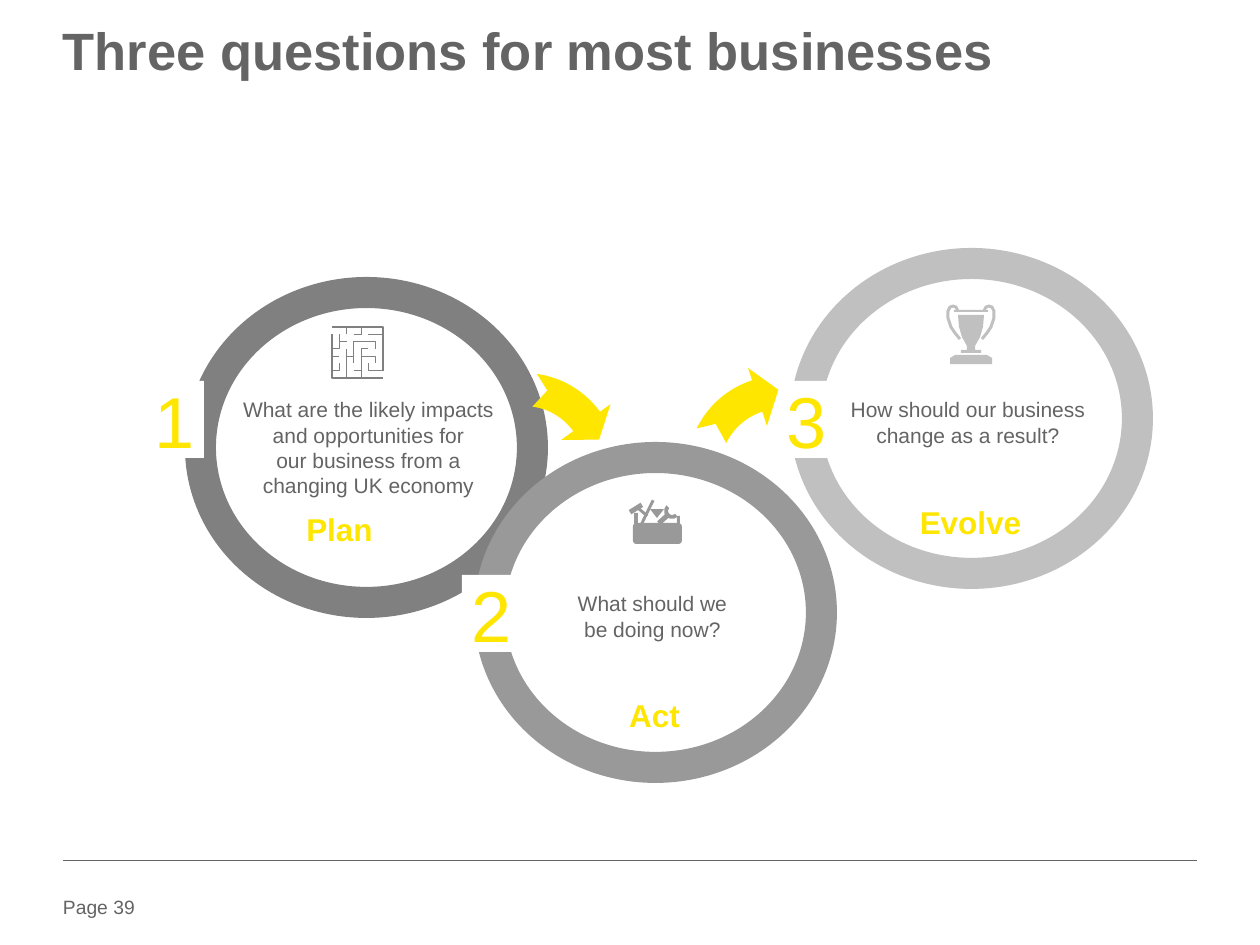
from copy import deepcopy
from dataclasses import dataclass
from math import cos, radians, sin

from lxml import etree
from pptx import Presentation
from pptx.dml.color import RGBColor
from pptx.enum.shapes import MSO_CONNECTOR, MSO_SHAPE
from pptx.enum.text import MSO_ANCHOR, PP_ALIGN
from pptx.oxml.ns import qn
from pptx.util import Pt

PX = 914400 / 126
FINE = 100
DONUT, RECT, ROUNDED = MSO_SHAPE.DONUT, MSO_SHAPE.RECTANGLE, MSO_SHAPE.ROUNDED_RECTANGLE
TRIANGLE, HALF_RING = MSO_SHAPE.ISOSCELES_TRIANGLE, MSO_SHAPE.BLOCK_ARC
STRAIGHT = MSO_CONNECTOR.STRAIGHT
LEFT, CENTER = PP_ALIGN.LEFT, PP_ALIGN.CENTER
TOP, MIDDLE = MSO_ANCHOR.TOP, MSO_ANCHOR.MIDDLE


@dataclass(frozen=True)
class Theme:
    font: str = "Arial"
    ink: str = "646464"
    accent: str = "FFE600"
    paper: str = "FFFFFF"
    title: float = 30
    number: float = 41.2
    label: float = 18
    body: float = 12
    footer: float = 11


THEME = Theme()
SLIDE_SIZE = (1260, 945)
RING_SIZE, RING_WIDTH = (363, 341), 0.091
NUMBER_SIZE = (59, 77)
LABEL_SIZE = (193, 38)
TITLE = ("Three questions for most businesses", (63, 28, 1134, 118))
FOOTER = ("Page 39", (63, 895, 100, 28))
RULE = (63, 860, 1197, 860)

STAGES = [
    dict(number="1", label="Plan", color="808080", ring=(185, 277), number_at=(145, 381),
         question="What are the likely impacts and opportunities for\nour business from a\nchanging UK economy",
         question_box=(224, 397, 289, 102), label_at=(243, 510)),
    dict(number="3", label="Evolve", color="C0C0C0", ring=(790, 248), number_at=(777, 381),
         question="How should our business\nchange as a result?",
         question_box=(812, 397, 312, 50), label_at=(874, 503)),
    dict(number="2", label="Act", color="999999", ring=(474, 442), number_at=(462, 575),
         question="What should we\nbe doing now?",
         question_box=(526, 591, 253, 50), label_at=(558, 696)),
]

ARROW_PIVOT = (-48, 62)
ARROW_RADII = dict(barb_in=46, inner=61, middle=80, outer=94, barb_out=107)
ARROW_ANGLES = dict(tail=8, notch=17, neck=54, tip=70)
ARROWS = [dict(center=(572, 405), turn=0), dict(center=(737, 405), turn=-72)]

MAZE_AT, MAZE_SIZE, MAZE_CELLS = (332, 327), 51, 7
MAZE_BORDER = [
    [(0, 0), (7, 0), (7, 6)],
    [(0, 1), (0, 7), (7, 7)],
]
MAZE_WALLS = [
    [(2, 0), (2, 1)], [(4, 0), (4, 1), (3, 1)], [(5, 1), (7, 1)],
    [(7, 6), (5, 6), (5, 5)], [(1, 1), (1, 3), (0, 3)], [(1, 2), (2, 2)],
    [(0, 4), (1, 4)], [(0, 6), (1, 6), (1, 5)], [(2, 7), (2, 3)],
    [(2, 4), (3, 4)], [(3, 5), (3, 2), (6, 2), (6, 3)], [(3, 6), (4, 6)],
    [(4, 7), (4, 3), (5, 3)], [(4, 4), (6, 4), (6, 5)],
]

TROPHY_AXIS = 971
TROPHY_PROFILES = dict(
    rim=[(17, 310), (17, 312)],
    cup=[(13, 315), (12, 327), (9, 337), (4, 346), (4, 350), (10, 350), (10, 353)],
    base=[(16, 355), (21, 358), (21, 364)],
)
TROPHY_HANDLE = [(13, 311), (15, 307), (18, 306), (21, 307), (23, 311),
                 (23, 318), (20, 327), (16, 333), (11, 339)]

TOOLBOX = dict(
    case=(ROUNDED, (633, 523, 49, 21), 0),
    left_side=(RECT, (634, 513, 4, 14), 0),
    right_side=(RECT, (677, 516, 3, 10), 0),
    hammer_head=(RECT, (629, 506, 14, 5), -32),
    hammer_handle=(RECT, (635, 510, 14, 3), 40),
    screwdriver=(RECT, (646, 499, 3, 26), 26),
    chisel=(TRIANGLE, (650, 509, 14, 9), 180),
    wrench_jaw=(HALF_RING, (664, 503, 16, 16), 225),
    wrench_handle=(RECT, (657, 516, 14, 5), -42),
)


def emu(*lengths):
    return [round(length * PX) for length in lengths]


def paint(shape, color):
    shape.shadow.inherit = False
    shape.fill.solid()
    shape.fill.fore_color.rgb = RGBColor.from_string(color)
    shape.line.fill.background()
    return shape


def add_filled(page, kind, box, color):
    return paint(page.shapes.add_shape(kind, *emu(*box)), color)


def write(shape, text, *, size, color=THEME.ink, bold=False, align=CENTER,
          anchor=TOP, spacing=None, after=0):
    frame = shape.text_frame
    frame.word_wrap = True
    frame.margin_left = frame.margin_top = frame.margin_right = frame.margin_bottom = 0
    frame.vertical_anchor = anchor
    para = frame.paragraphs[0]
    para.text = text
    para.alignment = align
    para.line_spacing = spacing
    para.space_after = Pt(after)
    for span in para.runs:
        span.font.name = THEME.font
        span.font.size = Pt(size)
        span.font.bold = bold
        span.font.color.rgb = RGBColor.from_string(color)
    for line_break in para._p.findall(qn("a:br")):
        line_break.insert(0, deepcopy(para.runs[0].font._element))


def add_text(page, text, box, **style):
    write(page.shapes.add_textbox(*emu(*box)), text, **style)


def add_freeform(page, paths, closed):
    first, *others = [[(x * FINE, y * FINE) for x, y in points] for points in paths]
    builder = page.shapes.build_freeform(*first[0], scale=PX / FINE)
    builder.add_line_segments(first[1:], close=closed)
    for points in others:
        builder.move_to(*points[0])
        builder.add_line_segments(points[1:], close=closed)
    return builder.convert_to_shape()


def add_strokes(page, paths, color, width):
    shape = add_freeform(page, paths, closed=False)
    shape.shadow.inherit = False
    shape.fill.background()
    shape.line.width = emu(width)[0]
    shape.line.color.rgb = RGBColor.from_string(color)


def add_arrow(page, center, turn):
    radius, angle = ARROW_RADII, ARROW_ANGLES
    sweep = range(angle["tail"], angle["neck"] + 1, 2)
    polar_points = [
        *[(radius["outer"], degrees) for degrees in sweep],
        (radius["barb_out"], angle["neck"]),
        (radius["middle"], angle["tip"]),
        (radius["barb_in"], angle["neck"]),
        *[(radius["inner"], degrees) for degrees in reversed(sweep)],
        (radius["middle"], angle["notch"]),
    ]
    turn_cos, turn_sin = cos(radians(turn)), sin(radians(turn))
    outline = []
    for distance, degrees in polar_points:
        x = ARROW_PIVOT[0] + distance * sin(radians(degrees))
        y = ARROW_PIVOT[1] - distance * cos(radians(degrees))
        outline.append((center[0] + x * turn_cos - y * turn_sin,
                        center[1] + x * turn_sin + y * turn_cos))
    paint(add_freeform(page, [outline], closed=True), THEME.accent)


def draw_maze(page, color):
    cell = MAZE_SIZE / MAZE_CELLS
    for walls, width in ((MAZE_BORDER, 2), (MAZE_WALLS, 1)):
        paths = [[(MAZE_AT[0] + column * cell, MAZE_AT[1] + row * cell)
                  for column, row in wall] for wall in walls]
        add_strokes(page, paths, color, width)


def draw_trophy(page, color):
    def side(points, sign):
        return [(TROPHY_AXIS + sign * reach, y) for reach, y in points]

    outlines = [side(profile, 1) + side(reversed(profile), -1)
                for profile in TROPHY_PROFILES.values()]
    paint(add_freeform(page, outlines, closed=True), color)
    add_strokes(page, [side(TROPHY_HANDLE, sign) for sign in (-1, 1)], color, 3)


def draw_toolbox(page, color):
    for kind, box, rotation in TOOLBOX.values():
        add_filled(page, kind, box, color).rotation = rotation


ICONS = {"Plan": draw_maze, "Act": draw_toolbox, "Evolve": draw_trophy}


def add_stage(page, stage):
    tile = add_filled(page, RECT, stage["number_at"] + NUMBER_SIZE, THEME.paper)
    write(tile, stage["number"], size=THEME.number, color=THEME.accent, anchor=MIDDLE)
    add_text(page, stage["question"], stage["question_box"], size=THEME.body, after=5.1)
    add_text(page, stage["label"], stage["label_at"] + LABEL_SIZE, size=THEME.label,
             color=THEME.accent, bold=True, after=5.1)
    ICONS[stage["label"]](page, stage["color"])


def main():
    deck = Presentation()
    deck.slide_width, deck.slide_height = emu(*SLIDE_SIZE)
    page = deck.slides.add_slide(deck.slide_layouts[6])

    add_text(page, *FOOTER, size=THEME.footer, align=LEFT)
    rule = page.shapes.add_connector(STRAIGHT, *emu(*RULE))
    rule.line.width = Pt(0.25)
    rule.line.color.rgb = RGBColor.from_string(THEME.ink)
    etree.SubElement(rule._element.spPr, qn("a:effectLst"))
    add_text(page, *TITLE, size=THEME.title, bold=True, align=LEFT, spacing=0.85)

    for stage in STAGES:
        ring = add_filled(page, DONUT, stage["ring"] + RING_SIZE, stage["color"])
        ring.adjustments[0] = RING_WIDTH
    for stage in STAGES:
        add_stage(page, stage)
    for arrow in ARROWS:
        add_arrow(page, **arrow)

    deck.save("out.pptx")


if __name__ == "__main__":
    main()
